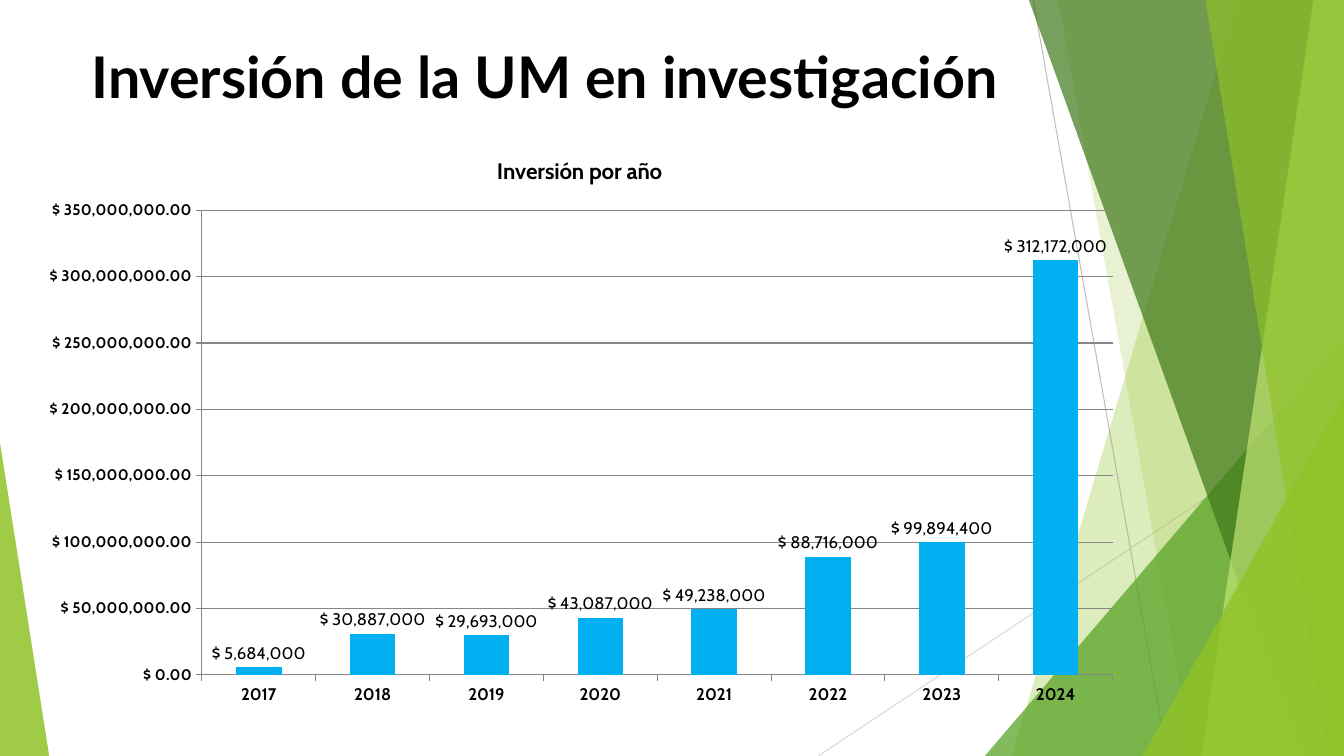
from dataclasses import dataclass

from lxml.etree import SubElement
from pptx import Presentation
from pptx.chart.data import CategoryChartData as ChartData
from pptx.dml.color import RGBColor as RGB
from pptx.enum.chart import XL_CHART_TYPE as ChartType
from pptx.enum.chart import XL_LABEL_POSITION as LabelPos
from pptx.enum.chart import XL_TICK_MARK as Tick
from pptx.enum.shapes import MSO_CONNECTOR as Link
from pptx.enum.shapes import MSO_SHAPE as Shape
from pptx.enum.text import MSO_ANCHOR as Anchor
from pptx.enum.text import PP_ALIGN as Align
from pptx.oxml import parse_xml
from pptx.oxml.ns import nsdecls, qn
from pptx.util import Cm, Pt


@dataclass(frozen=True)
class Theme:
    ink: str = "000000"
    bar: str = "00B0F0"
    grid: str = "868686"
    lime: str = "90C226"
    leaf: str = "54A021"
    moss: str = "3F7819"
    pale: str = "C0E474"
    head: str = "Lato"
    body: str = "Cabin"
    title: int = 41
    caption: int = 16
    label: int = 12
    scale: int = 11
    base: int = 10


THEME = Theme()
WIDE, HIGH = 33.87, 19.05

TITLE = "Inversión de la UM en investigación"
CAPTION = "Inversión por año"
SPEND = {
    "2017": 5684000,
    "2018": 30887000,
    "2019": 29693000,
    "2020": 43087000,
    "2021": 49238000,
    "2022": 88716000,
    "2023": 99894400,
    "2024": 312172000,
}

# Lengths in cm: x1, y1, x2, y2, colour
RAYS = [
    (26.04, 0, 29.41, HIGH, "BFBFBF"),
    (WIDE, 10.24, 20.62, HIGH, "D9D9D9"),
]
# Back to front. Band: top x, bottom x; peak: left, top, width, apex
FACETS = [
    ("band", (31.19, 25.5), THEME.lime, 30),
    ("band", (26.67, 30.05), THEME.lime, 20),
    ("peak", (24.82, 8.46, 9.05, 1), THEME.leaf, 72),
    ("band", (25.93, 32.79), THEME.moss, 70),
    ("band", (33.1, 30.28), THEME.pale, 70),
    ("band", (30.38, 33.48), THEME.lime, 65),
    ("peak", (28.8, 9.98, 5.07, 1), THEME.lime, 80),
    ("peak", (0, 11.15, 1.24, 0), THEME.lime, 85),
]
TITLE_BOX = (0.86, 0.89, 25.76, 2.01)
CHART_BOX = (0.61, 3.4, 27.99, 14.63)
PLOT = {"x": 0.16, "y": 0.13, "w": 0.82, "h": 0.8}


def color(code):
    return RGB.from_string(code)


def style(font, name, size, bold=False):
    font.name, font.size, font.bold = name, Pt(size), bold
    font.color.rgb = color(THEME.ink)


def draw_ray(shapes, x1, y1, x2, y2, code):
    ray = shapes.add_connector(Link.STRAIGHT, Cm(x1), Cm(y1), Cm(x2), Cm(y2))
    ray.line.color.rgb = color(code)
    ray.line.width = Pt(0.75)
    SubElement(ray._element.spPr, qn("a:effectLst"))


def draw_band(shapes, top, foot):
    """Fill from a slanted left edge to the right side of the slide."""
    pen = shapes.build_freeform(Cm(top), 0)
    edge = [(WIDE, 0), (WIDE, HIGH), (foot, HIGH)]
    pen.add_line_segments([(Cm(x), Cm(y)) for x, y in edge], close=True)
    return pen.convert_to_shape()


def draw_peak(shapes, left, top, width, apex):
    peak = shapes.add_shape(
        Shape.ISOSCELES_TRIANGLE, Cm(left), Cm(top), Cm(width), Cm(HIGH - top))
    peak.adjustments[0] = apex
    return peak


def draw_facet(shapes, kind, args, code, alpha):
    draw = {"band": draw_band, "peak": draw_peak}[kind]
    facet = draw(shapes, *args)
    facet.shadow.inherit = False
    facet.fill.solid()
    facet.fill.fore_color.rgb = color(code)
    facet.line.fill.background()
    tint = facet._element.spPr.find(qn("a:solidFill"))[0]
    SubElement(tint, qn("a:alpha"), val=str(alpha * 1000))


def set_title(title):
    title.left, title.top, title.width, title.height = map(Cm, TITLE_BOX)
    frame = title.text_frame
    frame.text = TITLE
    frame.word_wrap = True
    frame.vertical_anchor = Anchor.MIDDLE
    line = frame.paragraphs[0]
    line.alignment = Align.CENTER
    style(line.font, THEME.head, THEME.title, True)


def set_axis(axis, size):
    axis.major_tick_mark = Tick.OUTSIDE
    axis.minor_tick_mark = Tick.NONE
    axis.format.line.color.rgb = color(THEME.grid)
    style(axis.tick_labels.font, THEME.body, size, True)


def fix_plot(chart):
    """Pin the inner plot area to fractions of the chart frame."""
    area = chart._chartSpace.chart.plotArea
    for old in area.findall(qn("c:layout")):
        area.remove(old)
    rules = '<c:layoutTarget val="inner"/>'
    rules += "".join(f'<c:{k}Mode val="edge"/>' for k in "xy")
    rules += "".join(f'<c:{k} val="{v}"/>' for k, v in PLOT.items())
    area.insert(0, parse_xml(
        f'<c:layout {nsdecls("c")}><c:manualLayout>{rules}'
        "</c:manualLayout></c:layout>"))


def draw_chart(shapes):
    data = ChartData()
    data.categories = list(SPEND)
    data.add_series(CAPTION, list(SPEND.values()))
    chart = shapes.add_chart(
        ChartType.COLUMN_CLUSTERED, *map(Cm, CHART_BOX), data).chart
    style(chart.font, THEME.body, THEME.base)
    chart.has_legend = False
    chart.has_title = True
    frame = chart.chart_title.text_frame
    frame.text = CAPTION
    style(frame.paragraphs[0].font, THEME.body, THEME.caption, True)
    chart.chart_title.include_in_layout = False

    set_axis(chart.category_axis, THEME.label)
    scale = chart.value_axis
    set_axis(scale, THEME.scale)
    scale.minimum_scale, scale.maximum_scale = 0, 350_000_000
    scale.major_unit = 50_000_000
    scale.tick_labels.number_format = r'"$"\ #,##0.00'
    scale.tick_labels.number_format_is_linked = False
    scale.major_gridlines.format.line.color.rgb = color(THEME.grid)

    plot = chart.plots[0]
    plot.gap_width = 150
    plot.vary_by_categories = False
    bars = plot.series[0]
    bars.format.fill.solid()
    bars.format.fill.fore_color.rgb = color(THEME.bar)
    labels = bars.data_labels
    labels.show_value = True
    labels.position = LabelPos.OUTSIDE_END
    labels.number_format = r'"$"\ #,##0'
    labels.number_format_is_linked = False
    style(labels.font, THEME.body, THEME.label)
    fix_plot(chart)


def main():
    deck = Presentation()
    deck.slide_width, deck.slide_height = Cm(WIDE), Cm(HIGH)
    slide = deck.slides.add_slide(deck.slide_layouts.get_by_name("Title Only"))
    for ray in RAYS:
        draw_ray(slide.shapes, *ray)
    for facet in FACETS:
        draw_facet(slide.shapes, *facet)
    set_title(slide.shapes.title)
    draw_chart(slide.shapes)
    deck.save("out.pptx")


if __name__ == "__main__":
    main()
